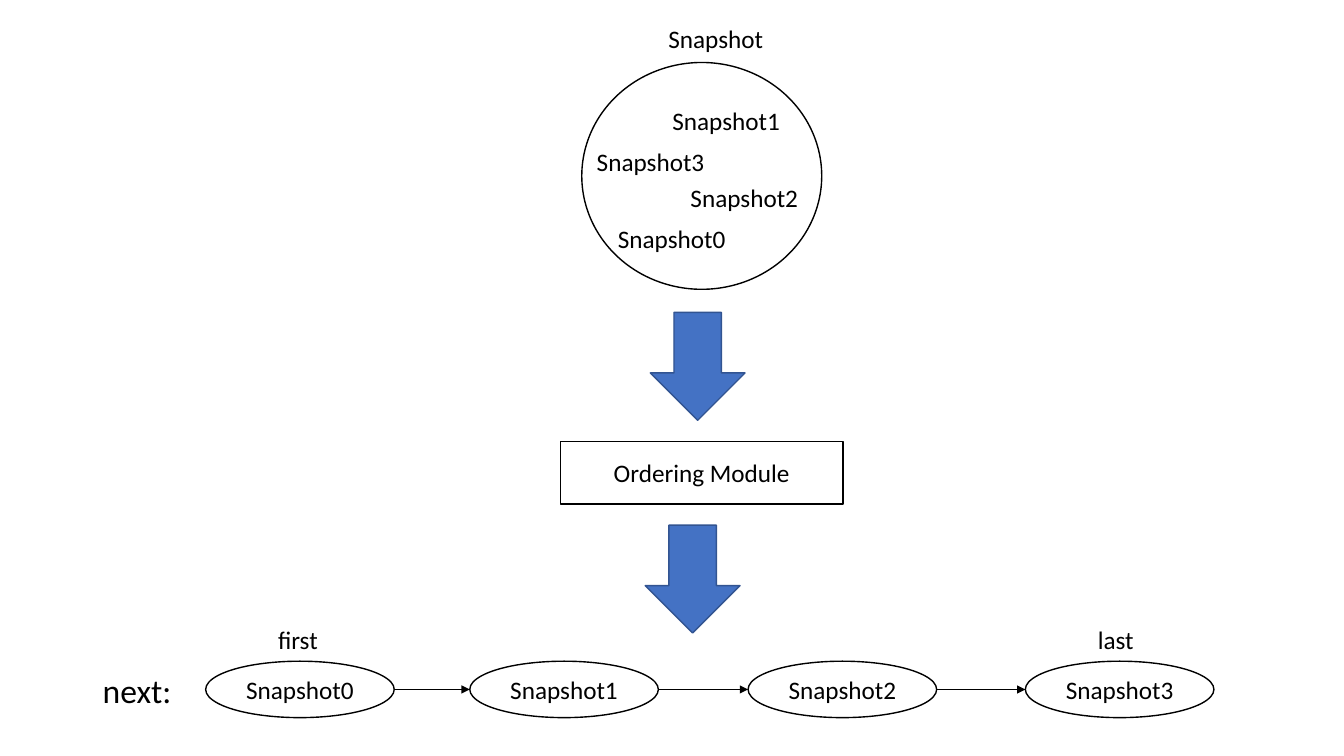
from pptx import Presentation
from pptx.dml.color import RGBColor
from pptx.enum.shapes import MSO_CONNECTOR as Conn, MSO_SHAPE as Kind
from pptx.enum.text import MSO_ANCHOR as Anchor, MSO_AUTO_SIZE as Fit, PP_ALIGN as Align
from pptx.util import Inches, Pt
from lxml import etree
from pptx.oxml.ns import qn

BLACK = RGBColor(0x00, 0x00, 0x00)
WHITE = RGBColor(0xFF, 0xFF, 0xFF)
BLUE = RGBColor(0x44, 0x72, 0xC4)
NAVY = RGBColor(0x32, 0x54, 0x91)

deck = Presentation()
deck.slide_width, deck.slide_height = Inches(13.33), Inches(7.5)
slide = deck.slides.add_slide(deck.slide_layouts[6])
shapes = slide.shapes


def add_node(kind, x, y, w, h, fill=WHITE, line=BLACK, text=""):
    node = shapes.add_shape(kind, Inches(x), Inches(y), Inches(w), Inches(h))
    node.shadow.inherit = False
    node.fill.solid()
    node.fill.fore_color.rgb = fill
    node.line.color.rgb = line
    node.line.width = Pt(1)
    if text:
        frame = node.text_frame
        frame.vertical_anchor = Anchor.MIDDLE
        para = frame.paragraphs[0]
        para.text = text
        para.alignment = Align.CENTER
        para.font.name, para.font.size = "Calibri", Pt(18)
        para.font.color.rgb = BLACK
    return node


def add_label(text, x, y, w, h=0.4, size=18):
    box = shapes.add_textbox(Inches(x), Inches(y), Inches(w), Inches(h))
    frame = box.text_frame
    frame.word_wrap = False
    frame.auto_size = Fit.SHAPE_TO_FIT_TEXT
    para = frame.paragraphs[0]
    para.text = text
    para.font.name, para.font.size = "Calibri", Pt(size)
    para.font.color.rgb = BLACK


# Unordered set of snapshots
pool = add_node(Kind.OVAL, 5.77, 0.62, 2.38, 2.25)
pool.fill.background()
for num, x, y in [(0, 6.03, 2.17), (1, 6.57, 1), (3, 5.82, 1.4), (2, 6.75, 1.76)]:
    add_label(f"Snapshot{num}", x, y, 1.28)
add_label("Snapshot", 6.53, 0.18, 1.15)

# Ordering module between two block arrows
for x, y in [(6.45, 3.1), (6.4, 5.21)]:
    add_node(Kind.DOWN_ARROW, x, y, 0.94, 1.07, BLUE, NAVY)
add_node(Kind.RECTANGLE, 5.56, 4.38, 2.8, 0.62, text="Ordering Module")

# Ordered chain
lefts = [2.04, 4.66, 7.42, 10.17]
top, wide, high = 6.56, 1.87, 0.56
for num, x in enumerate(lefts):
    add_node(Kind.OVAL, x, top, wide, high, text=f"Snapshot{num}")

# Links from each snapshot to the next
mid = Inches(top + high / 2)
for start, end in zip(lefts, lefts[1:]):
    link = shapes.add_connector(Conn.STRAIGHT, Inches(start + wide), mid, Inches(end), mid)
    link.line.color.rgb = BLACK
    link.line.width = Pt(0.5)
    etree.SubElement(link.line._get_or_add_ln(), qn("a:tailEnd"), type="triangle")
    etree.SubElement(link._element.spPr, qn("a:effectLst"))

# Chain labels
add_label("next:", 0.92, 6.6, 0.89, 0.5, 24)
add_label("first", 2.66, 6.14, 0.6)
add_label("last", 10.79, 6.14, 0.56)

deck.save("out.pptx")
